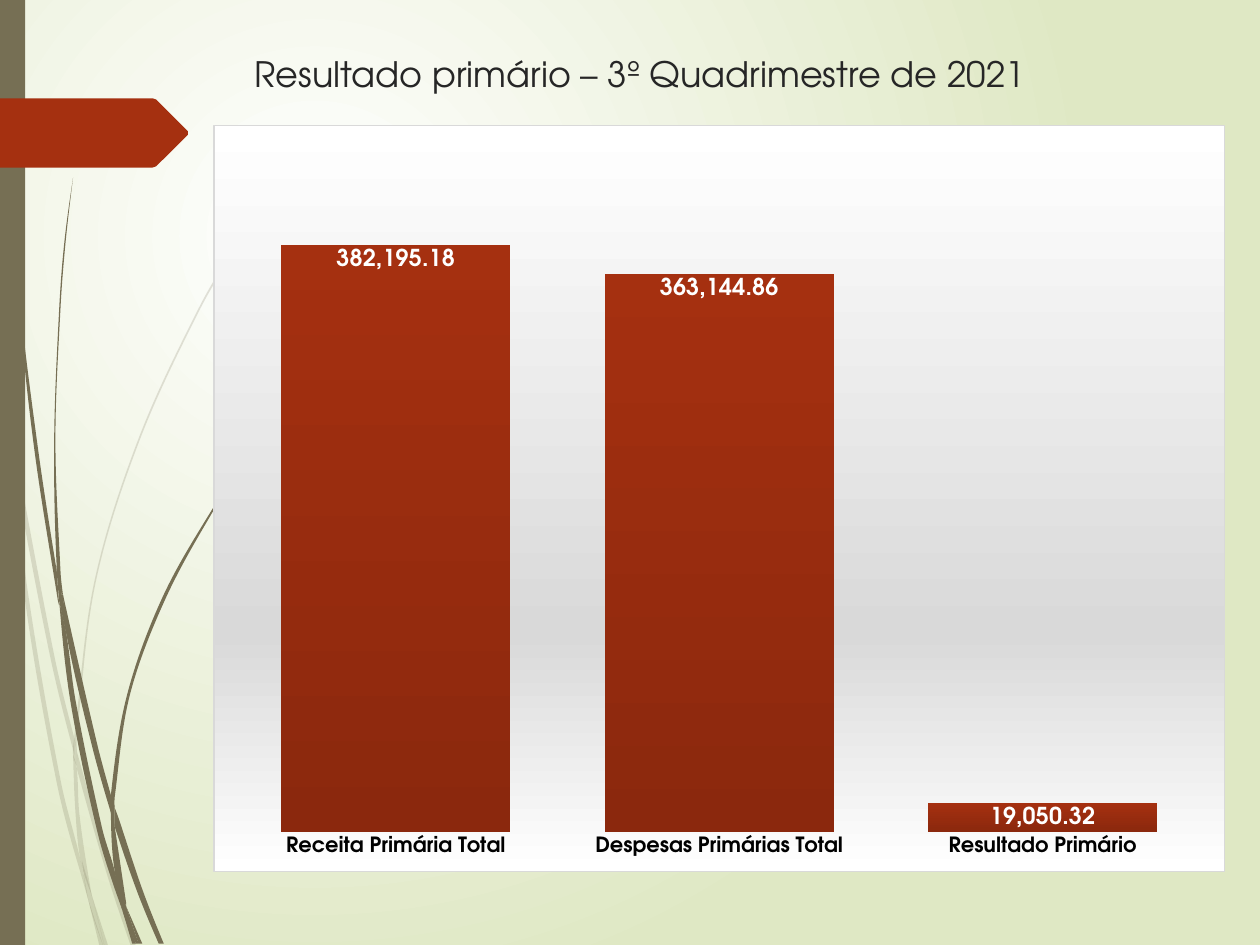
from math import dist

from lxml import etree
from pptx import Presentation
from pptx.chart.data import CategoryChartData
from pptx.dml.color import RGBColor
from pptx.enum.chart import XL_CHART_TYPE as ChartType
from pptx.enum.chart import XL_LABEL_POSITION as LabelPosition
from pptx.enum.chart import XL_TICK_MARK as TickMark
from pptx.enum.shapes import MSO_SHAPE as Preset
from pptx.enum.text import MSO_ANCHOR as Anchor
from pptx.enum.text import PP_ALIGN as Align
from pptx.oxml import parse_xml
from pptx.oxml.ns import nsdecls, qn
from pptx.util import Cm, Pt

FONT = "TeX Gyre Adventor"
COLORS = {
    "white": "FFFFFF", "black": "000000", "text": "262626",
    "meadow": "DFE8C4", "stem": "766F54", "rust": "A53010",
    "dark rust": "8B280D", "grey": "D9D9D9",
}
NUMBER_FORMAT = "#,##0.00"
RESULTS = {
    "Receita Primária Total": 382195.18,
    "Despesas Primárias Total": 363144.86,
    "Resultado Primário": 19050.32,
}
DOWNWARD = '<a:lin ang="5400000" scaled="0"/>'
FROM_UPPER_LEFT = ('<a:path path="circle"><a:fillToRect l="50000" t="50000" '
                   'r="100000" b="100000"/></a:path>')

# Outlines: each is a list of sides, each side a smooth run of points.
GRID = Cm(0.0254)
PALE_STEMS = [
    [[(8, 350), (6, 322), (0, 282)], [(0, 299), (7, 344), (8, 350)]],
    [[(59, 586), (43, 520), (10, 345)], [(12, 376), (40, 522), (59, 599)]],
    [[(61, 596), (64, 607), (88, 692), (108, 751)],
     [(104, 751), (85, 694), (61, 610)]],
    [[(73, 711), (83, 751)], [(86, 751), (73, 711)]],
    [[(8, 350), (12, 376), (22, 469), (48, 619), (64, 683), (70, 714)],
     [(64, 693), (45, 621), (19, 470), (8, 350)]],
    [[(58, 599), (60, 646), (64, 683), (73, 711)],
     [(72, 706), (63, 646), (61, 610), (58, 599)]],
    [[(61, 596), (61, 584), (76, 462), (111, 349), (159, 245), (187, 198),
      (217, 154)],
     [(217, 153), (186, 197), (158, 244), (110, 348), (75, 461), (59, 584),
      (59, 586), (61, 596)]],
    [[(70, 714), (79, 751)], [(82, 751), (70, 714)]],
    [[(59, 586), (58, 599), (61, 608)], [(61, 610), (61, 596), (59, 586)]],
    [[(65, 683), (70, 714), (82, 751)], [(83, 751), (73, 711), (65, 683)]],
]
DARK_STEMS = [
    [[(2, 0), (3, 48), (5, 110), (14, 233), (27, 355), (46, 477), (47, 481)],
     [(45, 453), (30, 355), (15, 232), (6, 109), (4, 48), (3, 0)]],
    [[(50, 472), (53, 505), (73, 592), (88, 645)],
     [(88, 631), (77, 590), (50, 472)]],
    [[(91, 641), (94, 649), (113, 706), (130, 749)],
     [(126, 749), (109, 708), (91, 656)]],
    [[(47, 477), (53, 505), (60, 556), (81, 657), (91, 691), (97, 722)],
     [(92, 708), (77, 659), (56, 557), (47, 477)]],
    [[(50, 472), (48, 453), (44, 349), (48, 245), (52, 193), (58, 141)],
     [(58, 141), (51, 193), (47, 245), (43, 349), (45, 449), (49, 472)]],
    [[(100, 719), (110, 749)], [(113, 749), (100, 719)]],
    [[(45, 449), (49, 472)], [(50, 472), (53, 505)],
     [(47, 477), (45, 453), (45, 449)]],
    [[(91, 641), (91, 633), (103, 552), (131, 476), (169, 406), (191, 374),
      (216, 344)],
     [(215, 344), (191, 373), (168, 405), (129, 474), (101, 551), (88, 631),
      (91, 641)]],
    [[(97, 722), (105, 749)], [(108, 749), (97, 722)]],
    [[(88, 645), (91, 691), (100, 719)],
     [(100, 716), (91, 656), (90, 651), (88, 645)]],
    [[(88, 631), (88, 645), (91, 656)], [(91, 641), (88, 631)]],
    [[(91, 691), (97, 722), (108, 749)], [(110, 749), (100, 719), (91, 691)]],
]
ARROW = [[(0, 78), (121, 78)], [(124, 79), (149, 104)], [(149, 107), (124, 132)],
         [(121, 133), (0, 133)]]


def rgb(name):
    return RGBColor.from_string(COLORS[name])


def apply_format(target, **values):
    for name, value in values.items():
        setattr(target, name, value)


def set_font(font, size, color, bold=False):
    apply_format(font, name=FONT, size=Pt(size), bold=bold)
    font.color.rgb = rgb(color)


def gradient(stops, direction):
    """Return a gradient element from (percent, colour name) stops."""
    marks = "".join(f'<a:gs pos="{place * 1000}"><a:srgbClr val="{COLORS[name]}"/></a:gs>'
                    for place, name in stops)
    return parse_xml(f'<a:gradFill {nsdecls("a")} rotWithShape="1">'
                     f'<a:gsLst>{marks}</a:gsLst>{direction}</a:gradFill>')


def fill_gradient(owner, fill, stops, direction):
    fill.gradient()
    default = owner.find(".//" + qn("a:gradFill"))
    default.getparent().replace(default, gradient(stops, direction))


def paint(shape, color, opacity=100):
    shape.shadow.inherit = False
    shape.line.fill.background()
    shape.fill.solid()
    shape.fill.fore_color.rgb = rgb(color)
    if opacity < 100:
        tint = shape.fill._xPr.find(".//" + qn("a:srgbClr"))
        etree.SubElement(tint, qn("a:alpha"), val=str(opacity * 1000))


def toward(start, target, share):
    return tuple(a + (b - a) * share for a, b in zip(start, target))


def handles(points):
    """Return the two Bézier handles of each span of a smooth run."""
    before, after = {}, {}
    for i in range(1, len(points) - 1):
        a, b, c = points[i - 1:i + 2]
        slope = [(q - p) / (dist(a, c) * 3) for p, q in zip(a, c)]
        before[i] = tuple(p - s * dist(a, b) for p, s in zip(b, slope))
        after[i] = tuple(p + s * dist(b, c) for p, s in zip(b, slope))
    last = len(points) - 1
    after[0] = toward(points[0], before[1], 0.5)
    before[last] = toward(points[last], after[last - 1], 0.5)
    return [(after[i], before[i + 1]) for i in range(last)]


def add_outline(page, sides, color, opacity=100):
    corners = [(x * GRID, y * GRID) for side in sides for x, y in side]
    builder = page.shapes.build_freeform(*corners[0])
    builder.add_line_segments(corners[1:], close=True)
    shape = builder.convert_to_shape()
    steps = iter(shape._element.findall(".//" + qn("a:lnTo")))
    for number, side in enumerate(sides):
        if number:
            next(steps)
        for pair in handles(side) if len(side) > 2 else [()] * (len(side) - 1):
            step = next(steps)
            for place, (x, y) in enumerate(pair):
                step.tag = qn("a:cubicBezTo")
                step.insert(place, etree.Element(
                    qn("a:pt"), x=str(round(x * GRID - shape.left)),
                    y=str(round(y * GRID - shape.top))))
    paint(shape, color, opacity)


def add_title(page, text):
    box = page.shapes.add_textbox(Cm(0.84), Cm(0.93), Cm(24.13), Cm(2.34))
    apply_format(box.text_frame, word_wrap=True, vertical_anchor=Anchor.TOP)
    para = box.text_frame.paragraphs[0]
    para.alignment = Align.CENTER
    span = para.add_run()
    span.text = text
    set_font(span.font, 20, "text")


def style_chart_area(chart):
    frame = parse_xml(f'<c:spPr {nsdecls("c", "a")}><a:ln w="9525"><a:solidFill>'
                      f'<a:srgbClr val="{COLORS["grey"]}"/></a:solidFill></a:ln></c:spPr>')
    frame.insert(0, gradient([(0, "white"), (68, "grey"), (100, "white")], DOWNWARD))
    chart._chartSpace.find(qn("c:chart")).addnext(frame)


def add_results_chart(page):
    data = CategoryChartData(number_format=NUMBER_FORMAT)
    data.categories = list(RESULTS)
    data.add_series("Series 1", list(RESULTS.values()))
    chart = page.shapes.add_chart(ChartType.COLUMN_CLUSTERED, Cm(4.3), Cm(2.52),
                                  Cm(20.4), Cm(15.06), data).chart
    apply_format(chart, has_legend=False, has_title=False)
    set_font(chart.font, 10, "black")
    style_chart_area(chart)

    apply_format(chart.value_axis, visible=False, has_major_gridlines=False,
                 minimum_scale=0, maximum_scale=450000)
    axis = chart.category_axis
    apply_format(axis, major_tick_mark=TickMark.NONE, minor_tick_mark=TickMark.NONE)
    axis.format.line.fill.background()
    set_font(axis.tick_labels.font, 12, "black", bold=True)

    plot = chart.plots[0]
    apply_format(plot, gap_width=41, vary_by_categories=False, has_data_labels=True)
    apply_format(plot.data_labels, show_value=True, position=LabelPosition.INSIDE_END,
                 number_format=NUMBER_FORMAT, number_format_is_linked=False)
    set_font(plot.data_labels.font, 13.3, "white", bold=True)
    series = plot.series[0]
    fill_gradient(series._element, series.format.fill,
                  [(0, "rust"), (100, "dark rust")], DOWNWARD)


def main():
    deck = Presentation()
    apply_format(deck, slide_width=Cm(25.4), slide_height=Cm(19.05))
    page = deck.slides.add_slide(deck.slide_layouts[6])
    fill_gradient(page._element, page.background.fill,
                  [(0, "white"), (100, "meadow")], FROM_UPPER_LEFT)
    for stems, opacity in ((PALE_STEMS, 20), (DARK_STEMS, 100)):
        for stem in stems:
            add_outline(page, stem, "stem", opacity)
    paint(page.shapes.add_shape(Preset.RECTANGLE, 0, 0, Cm(0.51), deck.slide_height), "stem")
    add_outline(page, ARROW, "rust")
    add_title(page, "Resultado primário – 3º Quadrimestre de 2021")
    add_results_chart(page)
    deck.save("out.pptx")


if __name__ == "__main__":
    main()
